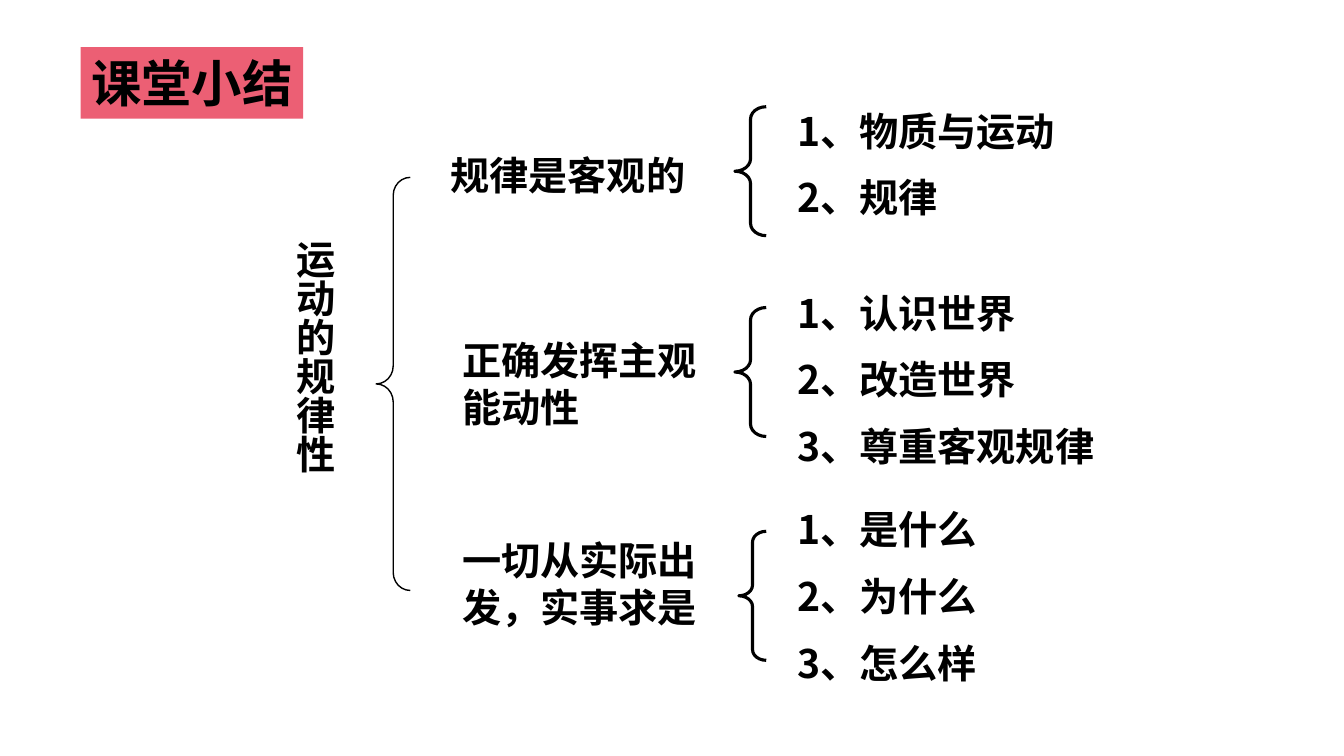
from lxml import etree
from pptx import Presentation
from pptx.dml.color import RGBColor
from pptx.enum.shapes import MSO_SHAPE
from pptx.enum.text import MSO_ANCHOR
from pptx.oxml.ns import qn
from pptx.util import Cm, Pt

RECTANGLE = MSO_SHAPE.RECTANGLE
LEFT_BRACE = MSO_SHAPE.LEFT_BRACE
TOP = MSO_ANCHOR.TOP

BLACK = RGBColor(0x00, 0x00, 0x00)
PINK = RGBColor(0xEC, 0x5F, 0x74)
CHINESE_FONT = "Noto Sans CJK SC"
BODY_FORMAT = {"size": Pt(28), "bold": True, "name": CHINESE_FONT}
TITLE_FORMAT = {"size": Pt(36), "bold": True, "name": "Arial"}

# Each branch: heading, heading box, brace box, points, points box (cm)
BRANCHES = [
    ("规律是客观的", (11.1, 3.68, 6.7, 1.45), (18.52, 2.69, 0.79, 3.25),
     ["1、物质与运动", "2、规律"], (19.84, 2.57, 9.04, 3.25)),
    ("正确发挥主观能动性", (11.4, 8.36, 6.83, 2.64), (18.52, 7.75, 0.79, 3.25),
     ["1、认识世界", "2、改造世界", "3、尊重客观规律"], (19.84, 7.16, 11, 5.03)),
    ("一切从实际出发，实事求是", (11.4, 13.39, 6.83, 2.64), (18.62, 13.39, 0.69, 3.25),
     ["1、是什么", "2、为什么", "3、怎么样"], (19.84, 12.62, 8.26, 5.03)),
]


def write_text(shape, lines, text_format, wrap=True):
    frame = shape.text_frame
    frame.word_wrap = wrap
    frame.vertical_anchor = TOP
    for index, line in enumerate(lines):
        paragraph = frame.paragraphs[0] if index == 0 else frame.add_paragraph()
        if index:
            paragraph.space_before = Pt(14)
        run = paragraph.add_run()
        run.text = line
        run.font.color.rgb = BLACK
        for attribute, value in text_format.items():
            setattr(run.font, attribute, value)
        east_asian = etree.SubElement(run.font._element, qn("a:ea"))
        east_asian.set("typeface", CHINESE_FONT)


def add_text(slide, box, lines):
    shape = slide.shapes.add_textbox(*map(Cm, box))
    write_text(shape, lines, BODY_FORMAT)
    return shape


def add_brace(slide, box, curve, width):
    brace = slide.shapes.add_shape(LEFT_BRACE, *map(Cm, box))
    brace.shadow.inherit = False
    brace.adjustments[0] = curve
    brace.fill.background()
    brace.line.color.rgb = BLACK
    brace.line.width = Pt(width)


def add_title(slide, box):
    title = slide.shapes.add_shape(RECTANGLE, *map(Cm, box))
    title.shadow.inherit = False
    title.fill.solid()
    title.fill.fore_color.rgb = PINK
    title.line.fill.background()
    write_text(title, ["课堂小结"], TITLE_FORMAT, wrap=False)


def add_topic(slide, box):
    left, top, width, height = box
    # Vertical topic
    topic = add_text(slide, (left, top + 1.32, 1.7, 6.48), ["运动的规律性"])
    topic.text_frame._txBody.bodyPr.set("vert", "eaVert")
    # Brace spanning all branches
    add_brace(slide, (left + width - 0.86, top, 0.86, height), 0.526, 1)


def add_branch(slide, heading, heading_box, brace_box, points, points_box):
    add_text(slide, heading_box, [heading])
    add_brace(slide, brace_box, 0.394, 2.25)
    add_text(slide, points_box, points)


def main():
    presentation = Presentation()
    presentation.slide_width = Cm(33.87)
    presentation.slide_height = Cm(19.05)
    slide = presentation.slides.add_slide(presentation.slide_layouts[6])
    add_title(slide, (2.03, 1.19, 5.61, 1.8))
    add_topic(slide, (6.96, 4.47, 3.38, 10.41))
    for branch in BRANCHES:
        add_branch(slide, *branch)
    presentation.save("out.pptx")


if __name__ == "__main__":
    main()
